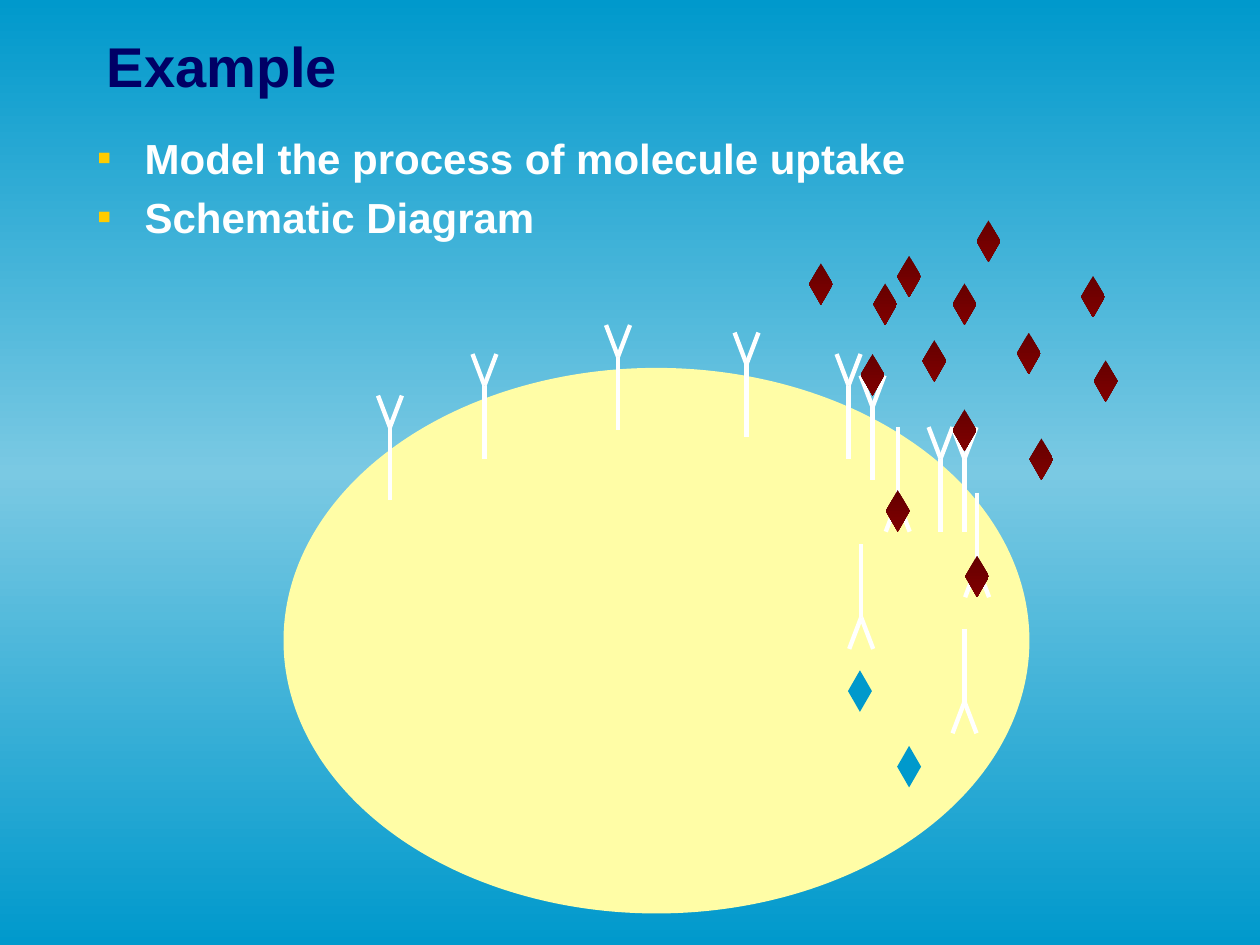
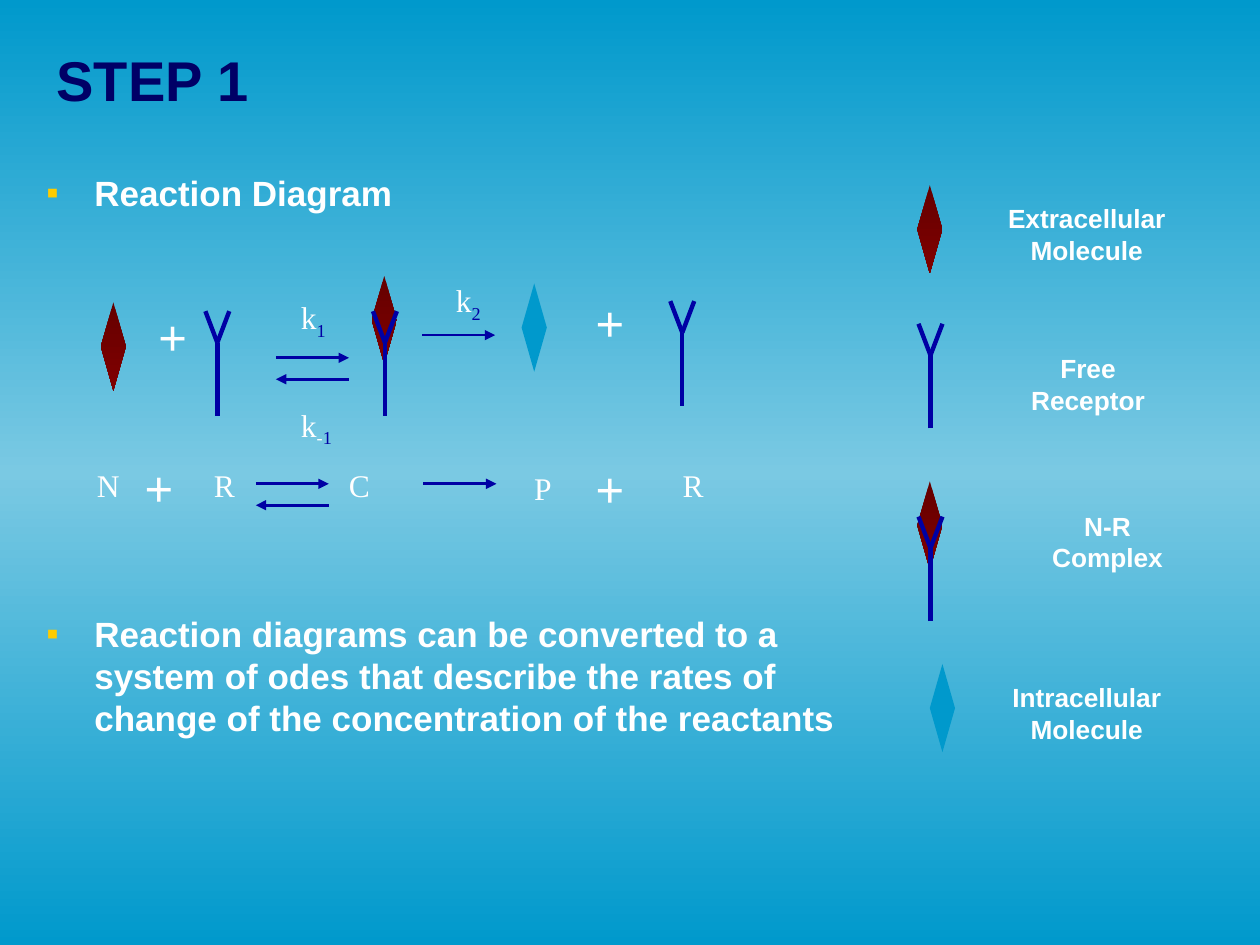
from lxml.etree import SubElement
from copy import deepcopy
from pptx import Presentation
from pptx.dml.color import RGBColor
from pptx.enum.shapes import MSO_CONNECTOR as Connector, MSO_SHAPE as Shape
from pptx.enum.text import MSO_ANCHOR as Anchor, PP_ALIGN as Align
from pptx.oxml.ns import qn
from pptx.util import Inches, Pt

COLORS = {
    "sky": "0099CC", "haze": "7AC9E3", "title": "000066", "white": "FFFFFF",
    "bullet": "FFCC00", "cell": "FFFDA6", "dark_red": "650000", "red": "800000",
    "blue": "0000A4",
}
SANS, SERIF = "Arial", "Times New Roman"
RECEPTOR_WIDTH, ARM_HEIGHT, RECEPTOR_HEIGHT = 0.19, 0.25, 0.83
SMALL, TALL = (0.19, 0.33), (0.2, 0.7)

OUTER_RECEPTORS = [
    (6.83, 2.98 - 0.17), (3.75, 2.81), (4.81, 2.58), (5.83, 2.64), (3, 3.14),
    (7.56, 3.39), (6.64, 2.81), (7.37, 3.39),
]
OUTER_RECEPTORS[0] = (6.83, 2.98)
BOUND_RECEPTORS = [(7.66, 3.91), (7.03, 3.39)]
EMPTY_RECEPTORS = [(6.74, 4.32), (7.56, 4.99)]
OUTER_MOLECULES = [
    (7.75, 1.75), (6.93, 2.25), (7.56, 2.25), (7.12, 2.03), (7.32, 2.7), (6.42, 2.09),
    (8.17, 3.48), (8.07, 2.64), (8.58, 2.19), (7.56, 3.25), (6.83, 2.81), (8.68, 2.86),
]
INNER_MOLECULES = [(6.73, 5.32), (7.12, 5.92)]


def rgb(name):
    """Return the named colour."""
    return RGBColor.from_string(COLORS[name])


def set_gradient(fill, first, last):
    """Fill from top to bottom with two colours."""
    fill.gradient()
    fill.gradient_angle = 270
    for stop, name in zip(fill.gradient_stops, (first, last)):
        stop.color.rgb = rgb(name)


def set_background(master):
    """Give every slide a gradient that is palest halfway down."""
    set_gradient(master.background.fill, "sky", "sky")
    stops = master.element.find(".//" + qn("p:bg")).find(".//" + qn("a:gsLst"))
    middle = deepcopy(stops[0])
    middle.set("pos", "50000")
    middle[0].set("val", COLORS["haze"])
    stops.insert(1, middle)


def style(span, size, color="white", font=SANS, bold=False):
    """Format one run."""
    span.font.size, span.font.name, span.font.bold = Pt(size), font, bold
    span.font.color.rgb = rgb(color)


def add_text(page, box, lines, size, color="white", bold=False, align=Align.LEFT):
    """Add a wrapped text box in the sans font and return its frame."""
    frame = page.shapes.add_textbox(*map(Inches, box)).text_frame
    frame.word_wrap = True
    frame.text = "\n".join(lines)
    for para in frame.paragraphs:
        para.alignment = align
        for span in para.runs:
            style(span, size, color, bold=bold)
    return frame


def add_title(page, box, text):
    """Add the slide title, centred vertically in its box."""
    frame = add_text(page, box, [text], 32, "title", True)
    frame.vertical_anchor = Anchor.MIDDLE


def add_bullets(page, box, lines, size):
    """Add bold paragraphs with square bullets and a hanging indent."""
    for para in add_text(page, box, lines, size, bold=True).paragraphs:
        para.space_before = Pt(size * 0.2)
        properties = para._p.get_or_add_pPr()
        properties.set("marL", str(Inches(0.38)))
        properties.set("indent", str(Inches(-0.38)))
        tint = SubElement(properties, qn("a:buClr"))
        SubElement(tint, qn("a:srgbClr"), val=COLORS["bullet"])
        SubElement(properties, qn("a:buFont"), typeface=SANS)
        SubElement(properties, qn("a:buChar"), char="▪")


def add_symbol(page, left, top, text, subscript=()):
    """Add a serif symbol followed by (text, colour) subscripts."""
    box = map(Inches, (left, top, 0.6, 0.4))
    frame = page.shapes.add_textbox(*box).text_frame
    frame.word_wrap = True
    frame.text = text
    para = frame.paragraphs[0]
    style(para.runs[0], 18, font=SERIF)
    for part, color in subscript:
        span = para.add_run()
        span.text = part
        style(span, 18, color, SERIF)
        span._r.get_or_add_rPr().set("baseline", "-25000")


def add_plus(page, left, top):
    """Add a large plus sign."""
    add_text(page, (left, top, 0.52, 0.57), ["+"], 28, align=Align.CENTER)


def add_line(shapes, start, end, color, width):
    """Add a straight line without a shadow."""
    points = map(Inches, (*start, *end))
    line = shapes.add_connector(Connector.STRAIGHT, *points)
    line.line.color.rgb = rgb(color)
    line.line.width = Pt(width)
    SubElement(line._element.spPr, qn("a:effectLst"))
    return line


def add_arrow(page, left, top, length=0.58):
    """Add a horizontal arrow; a negative length points it left."""
    arrow = add_line(page.shapes, (left, top), (left + length, top), "blue", 1.5)
    SubElement(arrow.line._get_or_add_ln(), qn("a:tailEnd"), type="triangle")


def add_reversible(page, left, top):
    """Add a forward arrow above a backward one."""
    add_arrow(page, left, top)
    add_arrow(page, left + 0.58, top + 0.17, -0.58)


def add_receptor(page, left, top, color, inverted=False):
    """Add a Y-shaped receptor, upside down if inverted."""
    def level(drop):
        return top + (RECEPTOR_HEIGHT - drop if inverted else drop)

    shapes = page.shapes.add_group_shape().shapes
    middle = left + RECEPTOR_WIDTH / 2
    fork = (middle, level(ARM_HEIGHT))
    tips = [(left, level(0)), (left + RECEPTOR_WIDTH, level(0)), (middle, level(RECEPTOR_HEIGHT))]
    for tip in tips:
        add_line(shapes, tip, fork, color, 2.5)


def add_solid(page, kind, box):
    """Add a preset shape without outline or shadow."""
    shape = page.shapes.add_shape(kind, *map(Inches, box))
    shape.shadow.inherit = False
    shape.line.fill.background()
    return shape


def add_molecule(page, left, top, size, inside=False):
    """Add a diamond: red outside the cell, blue inside."""
    shape = add_solid(page, Shape.DIAMOND, (left, top, *size))
    if inside:
        shape.fill.solid()
        shape.fill.fore_color.rgb = rgb("sky")
    else:
        set_gradient(shape.fill, "dark_red", "red")


def add_complex(page, left, top):
    """Add a molecule bound to a receptor."""
    add_molecule(page, left, top, TALL)
    add_receptor(page, left + 0.01, top + 0.28, "blue")


def add_cell(page, box):
    """Draw the cell with its receptors and molecules, placed from the cell's box."""
    cell = add_solid(page, Shape.OVAL, box)
    cell.fill.solid()
    cell.fill.fore_color.rgb = rgb("cell")
    shift_x, shift_y = box[0] - 2.25, box[1] - 2.92

    def place(points):
        return [(x + shift_x, y + shift_y) for x, y in points]

    for left, top in place(OUTER_RECEPTORS):
        add_receptor(page, left, top, "white")
    for left, top in place(OUTER_MOLECULES):
        add_molecule(page, left, top, SMALL)
    for left, top in place(BOUND_RECEPTORS + EMPTY_RECEPTORS):
        add_receptor(page, left, top, "white", inverted=True)
    for left, top in place(BOUND_RECEPTORS):
        add_molecule(page, left, top + 0.5, SMALL)
    for left, top in place(INNER_MOLECULES):
        add_molecule(page, left, top, SMALL, inside=True)


def add_legend(page, left, top):
    """Explain the four figures from a top left corner."""
    add_molecule(page, left, top, TALL)
    add_receptor(page, left + 0.01, top + 1.1, "blue")
    add_complex(page, left, top + 2.35)
    add_molecule(page, left + 0.1, top + 3.8, TALL, inside=True)
    labels = [
        (0.44, 0.09, 1.81, "Extracellular Molecule"), (0.78, 1.28, 1.15, "Free Receptor"),
        (0.77, 2.53, 1.48, "N-R Complex"), (0.44, 3.89, 1.81, "Intracellular Molecule"),
    ]
    for x, y, width, text in labels:
        box = (left + x, top + y, width, 0.6)
        add_text(page, box, [text], 15, bold=True, align=Align.CENTER)


def add_figure_reaction(page, left, top):
    """Draw the reaction with figures and rate constants."""
    add_molecule(page, left, top + 0.22, TALL)
    add_plus(page, left + 0.31, top + 0.2)
    add_receptor(page, left + 0.83, top + 0.29, "blue")
    add_reversible(page, left + 1.39, top + 0.66)
    add_complex(page, left + 2.15, top + 0.01)
    add_arrow(page, left + 2.55, top + 0.48)
    add_molecule(page, left + 3.34, top + 0.07, TALL, inside=True)
    add_plus(page, left + 3.78, top + 0.09)
    add_receptor(page, left + 4.52, top + 0.21, "blue")
    add_symbol(page, left + 1.49, top + 0.14, "k", [("1", "blue")])
    add_symbol(page, left + 1.49, top + 0.99, "k", [("-", "white"), ("1", "blue")])
    add_symbol(page, left + 2.72, top, "k", [("2", "blue")])


def add_letter_reaction(page, left, top):
    """Write the same reaction with letters."""
    letters = [("N", 0, 0), ("R", 0.93, 0), ("C", 2, 0), ("P", 3.47, 0.02), ("R", 4.65, 0)]
    for letter, x, y in letters:
        add_symbol(page, left + x, top + y, letter)
    add_plus(page, left + 0.33, top - 0.07)
    add_plus(page, left + 3.91, top - 0.06)
    add_reversible(page, left + 1.36, top + 0.19)
    add_arrow(page, left + 2.69, top + 0.19)


def build_example(page):
    """Build the schematic slide."""
    add_title(page, (0.75, 0.04, 8.5, 0.95), "Example")
    lines = ["Model the process of molecule uptake", "Schematic Diagram"]
    add_bullets(page, (0.67, 1, 8.5, 1.08), lines, 24)
    add_cell(page, (2.25, 2.92, 5.92, 4.33))


def build_step(page):
    """Build the reaction slide."""
    add_title(page, (0.35, 0, 9.65, 1.25), "STEP 1")
    add_bullets(page, (0.27, 1.31, 6.92, 0.5), ["Reaction Diagram"], 20)
    conclusion = (
        "Reaction diagrams can be converted to a system of odes that describe "
        "the rates of change of the concentration of the reactants"
    )
    add_bullets(page, (0.27, 4.81, 6.92, 1.31), [conclusion], 20)
    add_legend(page, 7.28, 1.47)
    add_figure_reaction(page, 0.8, 2.18)
    add_letter_reaction(page, 0.67, 3.65)


def main():
    """Build and save the deck."""
    deck = Presentation()
    deck.slide_width, deck.slide_height = Inches(10), Inches(7.5)
    set_background(deck.slide_master)
    for build in (build_example, build_step):
        build(deck.slides.add_slide(deck.slide_layouts[6]))
    deck.save("out.pptx")


if __name__ == "__main__":
    main()
